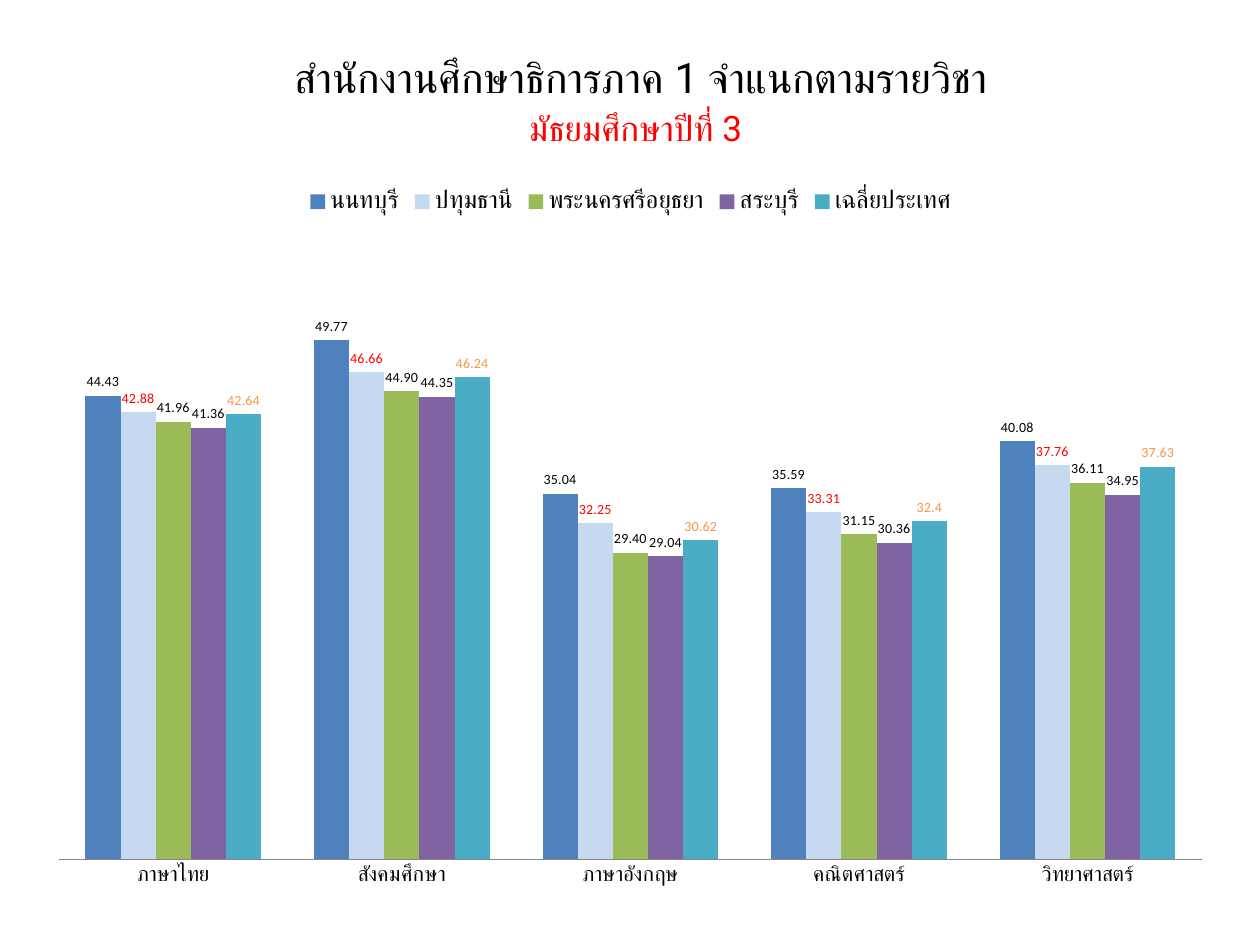
from lxml import etree
from pptx import Presentation
from pptx.chart.data import CategoryChartData
from pptx.dml.color import RGBColor
from pptx.enum.chart import (XL_CHART_TYPE, XL_LABEL_POSITION,
                             XL_LEGEND_POSITION, XL_TICK_MARK)
from pptx.enum.text import PP_ALIGN
from pptx.oxml.ns import qn
from pptx.util import Cm, Pt

CLUSTERED = XL_CHART_TYPE.COLUMN_CLUSTERED
OUTSIDE_END = XL_LABEL_POSITION.OUTSIDE_END
LEGEND_TOP = XL_LEGEND_POSITION.TOP
NO_TICKS = XL_TICK_MARK.NONE
CENTER = PP_ALIGN.CENTER

HEADING_FONT = "Roboto"
CHART_FONT = "Calibri"
BLACK, RED, ORANGE, GRAY = "000000", "FF0000", "F79646", "868686"

SUBJECTS = ["ภาษาไทย", "สังคมศึกษา", "ภาษาอังกฤษ", "คณิตศาสตร์", "วิทยาศาสตร์"]
# Name, scores by subject, bar colour, label colour, label number format
PROVINCES = [
    ("นนทบุรี", (44.43, 49.77, 35.04, 35.59, 40.08), "4F81BD", BLACK, "General"),
    ("ปทุมธานี", (42.88, 46.66, 32.25, 33.31, 37.76), "C6D9F1", RED, "General"),
    ("พระนครศรีอยุธยา", (41.96, 44.9, 29.4, 31.15, 36.11), "9BBB59", BLACK, "0.00"),
    ("สระบุรี", (41.36, 44.35, 29.04, 30.36, 34.95), "8064A2", BLACK, "General"),
    ("เฉลี่ยประเทศ", (42.64, 46.24, 30.62, 32.4, 37.63), "4BACC6", ORANGE, "General"),
]


def color(value):
    return RGBColor.from_string(value)


def format_font(font, size, name=CHART_FONT, fill=BLACK):
    font.size = Pt(size)
    font.name = name
    font.bold = False
    font.color.rgb = color(fill)


def add_text(slide, text, left, top, width, height, size=24, fill=BLACK):
    shape = slide.shapes.add_textbox(Cm(left), Cm(top), Cm(width), Cm(height))
    shape.text_frame.word_wrap = True
    paragraph = shape.text_frame.paragraphs[0]
    paragraph.alignment = CENTER
    run = paragraph.add_run()
    run.text = text
    format_font(run.font, size, HEADING_FONT, fill)


def set_plot_layout(chart, **fractions):
    """Fix the inner plot area as fractions of the chart's size."""
    plot_area = chart.plots[0]._element.getparent()
    for old_layout in plot_area.findall(qn("c:layout")):
        plot_area.remove(old_layout)
    layout = etree.Element(qn("c:layout"))
    manual = etree.SubElement(layout, qn("c:manualLayout"))
    settings = {"layoutTarget": "inner", "xMode": "edge", "yMode": "edge", **fractions}
    for tag, value in settings.items():
        etree.SubElement(manual, qn(f"c:{tag}")).set("val", str(value))
    plot_area.insert(0, layout)


def format_axes(chart):
    category_axis = chart.category_axis
    category_axis.major_tick_mark = NO_TICKS
    category_axis.minor_tick_mark = NO_TICKS
    category_axis.format.line.color.rgb = color(GRAY)
    category_axis.format.line.width = Pt(0.75)
    format_font(category_axis.tick_labels.font, 12, HEADING_FONT)
    value_axis = chart.value_axis
    value_axis.minimum_scale = 0
    value_axis.maximum_scale = 60
    value_axis.has_major_gridlines = False
    value_axis.visible = False


def format_series(series, bar_color, label_color, number_format):
    series.format.fill.solid()
    series.format.fill.fore_color.rgb = color(bar_color)
    series.invert_if_negative = False
    labels = series.data_labels
    labels.show_value = True
    labels.position = OUTSIDE_END
    labels.number_format = number_format
    labels.number_format_is_linked = False
    format_font(labels.font, 8, fill=label_color)


def add_score_chart(slide, left, top, width, height):
    data = CategoryChartData()
    data.categories = SUBJECTS
    for name, scores, *_ in PROVINCES:
        data.add_series(name, scores)
    chart = slide.shapes.add_chart(
        CLUSTERED, Cm(left), Cm(top), Cm(width), Cm(height), data).chart
    chart.has_title = False
    format_font(chart.font, 10)

    # Legend above the columns
    chart.has_legend = True
    chart.legend.position = LEGEND_TOP
    chart.legend.include_in_layout = False
    format_font(chart.legend.font, 14, HEADING_FONT)

    # Columns and axes
    plot = chart.plots[0]
    plot.gap_width = 150
    plot.overlap = 0
    plot.vary_by_categories = False
    for series, (_, _, *style) in zip(plot.series, PROVINCES):
        format_series(series, *style)
    format_axes(chart)
    set_plot_layout(chart, x=0.02, y=0.08, w=0.96, h=0.86)


def main():
    presentation = Presentation()
    presentation.slide_width = Cm(25.4)
    presentation.slide_height = Cm(19.05)
    slide = presentation.slides.add_slide(presentation.slide_layouts[6])

    # Headings
    add_text(slide, "สำนักงานศึกษาธิการภาค 1 จำแนกตามรายวิชา", 0.71, 0.91, 24.41, 1.27)
    add_text(slide, "มัธยมศึกษาปีที่ 3", 0.61, 2.03, 24.41, 1.12, size=20, fill=RED)

    # Scores by subject and province
    add_score_chart(slide, 0.71, 3.53, 24, 14.68)

    presentation.save("out.pptx")


if __name__ == "__main__":
    main()
